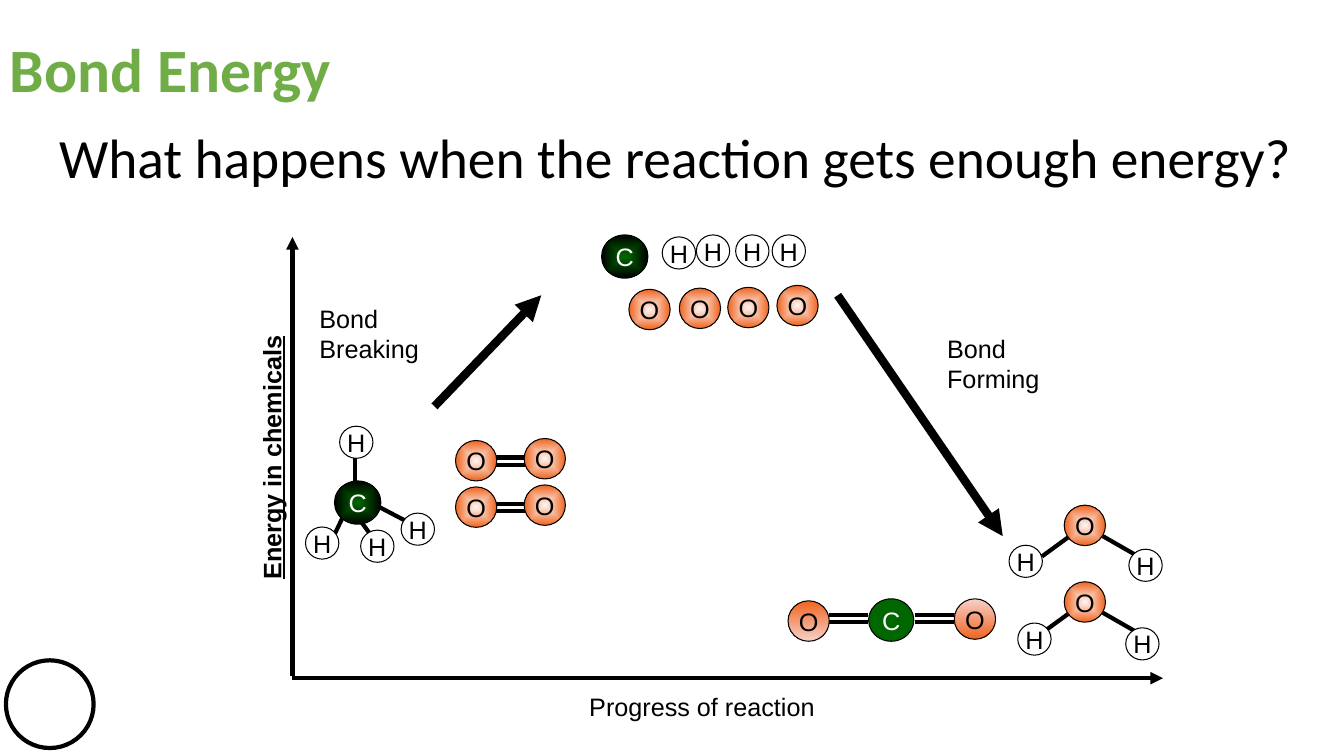
from dataclasses import dataclass

from lxml import etree
from pptx import Presentation
from pptx.dml.color import RGBColor
from pptx.enum import shapes, text
from pptx.oxml import parse_xml
from pptx.oxml.ns import nsdecls, qn
from pptx.util import Cm, Pt


@dataclass(frozen=True)
class Theme:
    black: str = "000000"
    white: str = "FFFFFF"
    heading: str = "70AD47"
    carbon: str = "006600"
    oxygen: str = "EF641F"
    oxygen_glow: str = "FDF5F3"
    oxygen_pale: str = "F8D0C9"
    heading_font: str = "Calibri"
    label_font: str = "Arial"
    heading_size: float = 44
    question_size: float = 39.6
    label_size: float = 18
    outline: float = 0.75
    bond: float = 3
    stage: float = 6


THEME = Theme()


@dataclass(frozen=True)
class Element:
    symbol: str
    width: float
    height: float
    fills: tuple[str, ...]
    ink: str = THEME.black
    radial: bool = True


@dataclass(frozen=True)
class Atom:
    element: Element
    left: float
    top: float


@dataclass(frozen=True)
class Link:
    x1: float
    y1: float
    x2: float
    y2: float
    weight: float = THEME.bond
    arrow: bool = False


@dataclass(frozen=True)
class Label:
    words: str
    left: float
    top: float
    width: float
    height: float
    size: float = THEME.label_size
    font: str = THEME.label_font
    color: str = THEME.black
    heading: bool = False
    axis: bool = False


HYDROGEN = Element("H", 0.84, 0.81, (THEME.white,))
OXYGEN = Element("O", 1.04, 1.02, (THEME.oxygen_glow, THEME.oxygen))
OXYGEN_LEFT = Element("O", 1.04, 1.02, (THEME.oxygen, THEME.oxygen_pale), radial=False)
OXYGEN_RIGHT = Element("O", 1.04, 1.02, (THEME.oxygen_pale, THEME.oxygen), radial=False)
CARBON = Element("C", 1.17, 1.09, (THEME.carbon, THEME.black), THEME.white)
CARBON_FLAT = Element("C", 1.14, 1.07, (THEME.carbon,), THEME.white)


def double_bond(left: float, right: float, top: float) -> list[Link]:
    return [Link(left, y, right, y) for y in (top, top + 0.18)]


def oxygen_molecule(top: float) -> list[Link | Atom]:
    return [*double_bond(12.45, 13.43, top + 0.48),
            Atom(OXYGEN, 13.21, top), Atom(OXYGEN, 11.48, top + 0.05)]


def water(top: float, left_h: tuple[float, float], right_h: tuple[float, float]) -> list[Link | Atom]:
    return [Link(26.26, top + 1.29, 27, top + 0.75),
            Link(27.74, top + 0.75, 28.63, top + 1.26),
            Atom(OXYGEN, 26.82, top), Atom(HYDROGEN, *left_h), Atom(HYDROGEN, *right_h)]


METHANE = [
    Link(8.94, 12.22, 8.94, 11.38), Link(8.71, 12.88, 8.41, 13.51),
    Link(8.94, 12.93, 9.5, 13.69), Link(9.22, 12.6, 10.52, 13.28),
    Atom(HYDROGEN, 8.56, 10.74), Atom(CARBON, 8.43, 12.12), Atom(HYDROGEN, 10.11, 12.93),
    Atom(HYDROGEN, 9.09, 13.36), Atom(HYDROGEN, 7.7, 13.28),
]
FREE_ATOMS = [
    *(Atom(OXYGEN, x, y) for x, y in ((15.85, 7.29), (17.12, 7.26), (18.34, 7.24), (19.58, 7.19))),
    Atom(CARBON, 15.16, 5.92),
    *(Atom(HYDROGEN, x, y) for x, y in ((16.69, 5.97), (17.55, 5.92), (18.54, 5.92), (19.46, 5.92))),
]
CARBON_DIOXIDE = [
    *double_bond(23.06, 24.06, 15.49), *double_bond(20.88, 21.88, 15.49),
    Atom(OXYGEN_LEFT, 19.86, 15.14), Atom(CARBON_FLAT, 21.89, 15.09),
    Atom(OXYGEN_RIGHT, 24.05, 15.09),
]
STAGES_AND_AXES = [
    Link(21.11, 7.44, 25.27, 13.51, THEME.stage, True),
    Link(10.95, 10.24, 13.64, 7.44, THEME.stage, True),
    Link(7.37, 17.04, 7.37, 5.97, arrow=True),
    Link(7.37, 17.09, 29.31, 17.09, arrow=True),
]
LABELS = [
    Label("What happens when the reaction gets enough energy?", 1.24, 2.34, 33.58, 3.43,
          THEME.question_size, THEME.heading_font, heading=True),
    Label("Bond\nForming", 23.62, 8.28, 2.87, 1.8),
    Label("Bond\nBreaking", 7.8, 7.52, 3.05, 1.8),
    Label("Progress of reaction", 14.6, 17.3, 6.25, 1.02),
    Label("Energy in chemicals", 3.48, 11.02, 6.71, 1.02, axis=True),
    Label("Bond Energy", 0, 0, 8.86, 3.68, THEME.heading_size, THEME.heading_font,
          THEME.heading, heading=True),
]


def rgb(color: str) -> RGBColor:
    return RGBColor.from_string(color)


def gradient(element: Element):
    first, last = element.fills
    direction = ('<a:path path="shape"><a:fillToRect l="50000" t="50000" r="50000" b="50000"/></a:path>'
                 if element.radial else '<a:lin ang="5400000" scaled="0"/>')
    return parse_xml(
        f'<a:gradFill {nsdecls("a")} rotWithShape="1"><a:gsLst>'
        f'<a:gs pos="0"><a:srgbClr val="{first}"/></a:gs>'
        f'<a:gs pos="100000"><a:srgbClr val="{last}"/></a:gs>'
        f'</a:gsLst>{direction}</a:gradFill>')


def draw_ellipse(slide, left: float, top: float, width: float, height: float, fill: str, weight: float):
    ellipse = slide.shapes.add_shape(shapes.MSO_SHAPE.OVAL, Cm(left), Cm(top), Cm(width), Cm(height))
    ellipse.shadow.inherit = False
    ellipse.fill.solid()
    ellipse.fill.fore_color.rgb = rgb(fill)
    ellipse.line.color.rgb = rgb(THEME.black)
    ellipse.line.width = Pt(weight)
    return ellipse


def draw_atom(slide, atom: Atom) -> None:
    element = atom.element
    ball = draw_ellipse(slide, atom.left, atom.top, element.width, element.height,
                        element.fills[0], THEME.outline)
    if len(element.fills) == 2:
        properties = ball.fill._xPr
        properties.replace(properties.find(qn("a:solidFill")), gradient(element))
    frame = ball.text_frame
    frame.text = element.symbol
    frame.word_wrap = False
    frame.vertical_anchor = text.MSO_ANCHOR.MIDDLE
    symbol = frame.paragraphs[0]
    symbol.alignment = text.PP_ALIGN.CENTER
    font = symbol.runs[0].font
    font.name, font.size = THEME.label_font, Pt(THEME.label_size)
    font.color.rgb = rgb(element.ink)


def draw_link(slide, link: Link) -> None:
    connector = slide.shapes.add_connector(
        shapes.MSO_CONNECTOR.STRAIGHT, Cm(link.x1), Cm(link.y1), Cm(link.x2), Cm(link.y2))
    connector.line.color.rgb = rgb(THEME.black)
    connector.line.width = Pt(link.weight)
    if link.arrow:
        etree.SubElement(connector.line._get_or_add_ln(), qn("a:tailEnd"), type="triangle")
    etree.SubElement(connector._element.spPr, qn("a:effectLst"))


def draw_label(slide, label: Label) -> None:
    box = slide.shapes.add_textbox(Cm(label.left), Cm(label.top), Cm(label.width), Cm(label.height))
    frame = box.text_frame
    frame.text = label.words
    frame.word_wrap = label.heading
    if label.heading or label.axis:
        frame.vertical_anchor = text.MSO_ANCHOR.MIDDLE
    if not label.heading:
        frame.auto_size = text.MSO_AUTO_SIZE.SHAPE_TO_FIT_TEXT
    if label.axis:
        box.rotation = 270
    for paragraph in frame.paragraphs:
        if label.heading:
            paragraph.line_spacing = 0.9
        if label.axis:
            paragraph.alignment = text.PP_ALIGN.CENTER
        font = paragraph.runs[0].font
        font.name, font.size = label.font, Pt(label.size)
        font.color.rgb = rgb(label.color)
        font.bold = label.axis or label.color == THEME.heading
        font.underline = label.axis


def main() -> None:
    deck = Presentation()
    deck.slide_width, deck.slide_height = Cm(33.87), Cm(19.05)
    slide = deck.slides.add_slide(deck.slide_layouts[6])
    draw_ellipse(slide, 0.15, 16.64, 2.21, 2.21, THEME.white, THEME.bond)
    for label in LABELS:
        draw_label(slide, label)
    for part in [*STAGES_AND_AXES, *oxygen_molecule(11.05), *oxygen_molecule(12.22), *METHANE,
                 *FREE_ATOMS, *CARBON_DIOXIDE, *water(14.66, (25.65, 15.7), (28.37, 15.82)),
                 *water(12.73, (25.43, 13.74), (28.45, 13.84))]:
        if isinstance(part, Atom):
            draw_atom(slide, part)
        else:
            draw_link(slide, part)
    deck.save("out.pptx")


if __name__ == "__main__":
    main()
